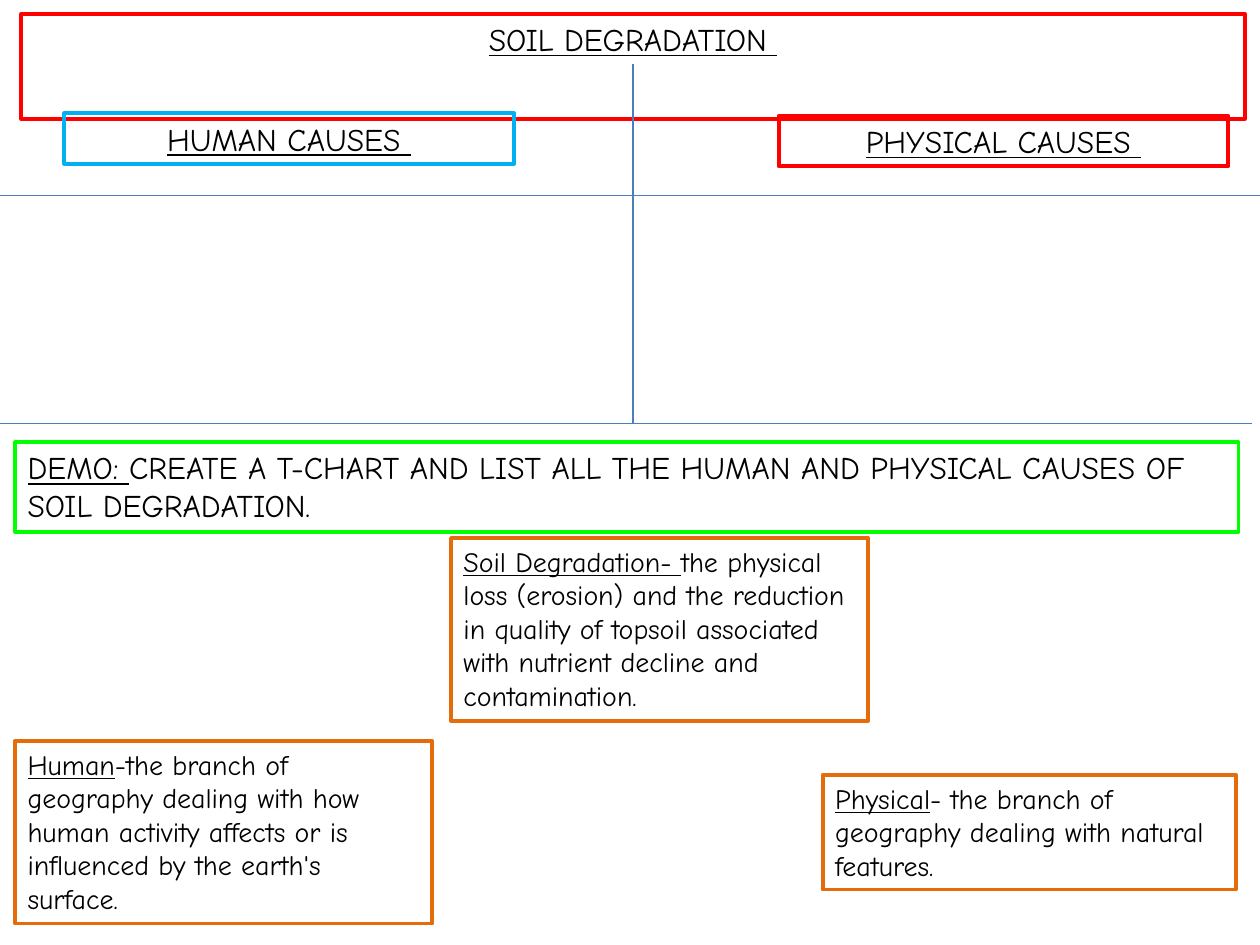
from lxml import etree
from pptx import Presentation
from pptx.dml.color import RGBColor
from pptx.enum.shapes import MSO_CONNECTOR as Connector
from pptx.enum.text import MSO_ANCHOR as Anchor, MSO_AUTO_SIZE as AutoSize, PP_ALIGN as Align
from pptx.oxml.ns import qn
from pptx.util import Inches, Pt

FONT = "Comic Neue"
COLORS = {
    "text": "000000",
    "red": "FF0000",
    "blue": "00B0F0",
    "green": "00FF00",
    "orange": "E46C0A",
    "rule": "4B7EBC",
}
HEADING_SIZE, DEFINITION_SIZE = 18, 16
HEADING_HEIGHT = 0.4
BOTTOM_CENTRE = 2


def rgb(name):
    return RGBColor.from_string(COLORS[name])


def fill_box(shape, border, term, rest="", size=HEADING_SIZE, align=Align.LEFT):
    """Outline a box and write an underlined term, then plain text."""
    shape.line.color.rgb = rgb(border)
    shape.line.width = Pt(2.25)
    frame = shape.text_frame
    frame.word_wrap = True
    frame.auto_size = AutoSize.SHAPE_TO_FIT_TEXT
    frame.vertical_anchor = Anchor.TOP
    paragraph = frame.paragraphs[0]
    paragraph.alignment = align
    for text, underlined in ((term, True), (rest, False)):
        if text:
            run = paragraph.add_run()
            run.text = text
            run.font.name = FONT
            run.font.size = Pt(size)
            run.font.underline = underlined
            run.font.color.rgb = rgb("text")


def add_box(slide, box, border, term, **text_options):
    textbox = slide.shapes.add_textbox(*map(Inches, box))
    fill_box(textbox, border, term, **text_options)


def add_rule(slide, start_x, start_y, end_x, end_y):
    rule = slide.shapes.add_connector(Connector.STRAIGHT, start_x, start_y, end_x, end_y)
    rule.line.color.rgb = rgb("rule")
    rule.line.width = Pt(0.75)
    etree.SubElement(rule._element.spPr, qn("a:effectLst"))
    return rule


def place_title(slide, left, top, width):
    title = slide.shapes.title
    title.left, title.top = Inches(left), Inches(top)
    title.width, title.height = Inches(width), Inches(HEADING_HEIGHT)
    fill_box(title, "red", "SOIL DEGRADATION ", align=Align.CENTER)
    return title


def add_t_chart(slide, title, left, top, width, height):
    """Draw the two column headings and the rules, with the stem under the title."""
    for dx, dy, border, heading in (
        (0.51, 0.39, "blue", "HUMAN CAUSES "),
        (6.18, 0.41, "red", "PHYSICAL CAUSES "),
    ):
        box = (left + dx, top + dy, 3.57, HEADING_HEIGHT)
        add_box(slide, box, border, heading, align=Align.CENTER)

    bottom = top + height
    middle = title.left + title.width // 2
    stem = add_rule(slide, middle, title.top + title.height, middle, Inches(bottom))
    stem.begin_connect(title, BOTTOM_CENTRE)
    for y, shift in ((top + 1.04, 0), (bottom, -0.06)):
        start = left + shift
        add_rule(slide, Inches(start + width), Inches(y), Inches(start), Inches(y))


def add_definitions(slide, left, top):
    for dx, dy, width, height, term, meaning in (
        (0, 1.61, 3.31, 1.45, "Human",
         "-the branch of geography dealing with how human activity affects "
         "or is influenced by the earth's surface."),
        (6.41, 1.88, 3.28, 0.91, "Physical",
         "- the branch of geography dealing with natural features."),
        (3.46, 0, 3.31, 1.45, "Soil Degradation- ",
         "the physical loss (erosion) and the reduction in quality of topsoil "
         "associated with nutrient decline and contamination."),
    ):
        add_box(slide, (left + dx, top + dy, width, height), "orange", term,
                rest=meaning, size=DEFINITION_SIZE)


def main():
    deck = Presentation()
    deck.slide_width, deck.slide_height = Inches(10), Inches(7.5)
    slide = deck.slides.add_slide(deck.slide_layouts.get_by_name("Title Only"))

    title = place_title(slide, 0.17, 0.11, 9.71)
    add_t_chart(slide, title, 0, 0.51, 10, 2.85)
    add_box(slide, (0.12, 3.51, 9.71, 0.71), "green", "DEMO: ",
            rest="CREATE A T-CHART AND LIST ALL THE HUMAN AND PHYSICAL CAUSES "
                 "OF SOIL DEGRADATION.")
    add_definitions(slide, 0.12, 4.27)

    deck.save("out.pptx")


if __name__ == "__main__":
    main()
